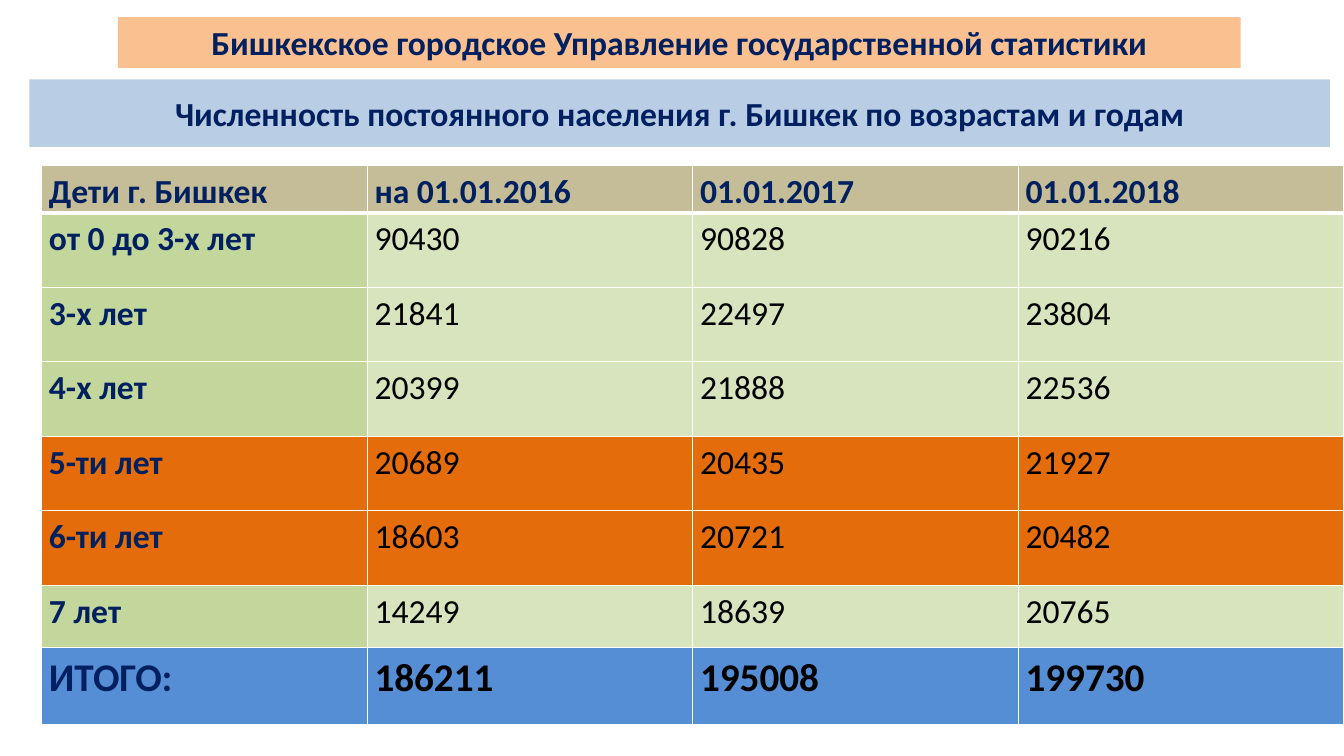
from lxml import etree
from pptx import Presentation
from pptx.dml.color import RGBColor
from pptx.enum.shapes import MSO_SHAPE
from pptx.enum.text import MSO_ANCHOR, PP_ALIGN
from pptx.oxml.ns import qn
from pptx.util import Pt

RECTANGLE = MSO_SHAPE.RECTANGLE
CENTER = PP_ALIGN.CENTER
MIDDLE = MSO_ANCHOR.MIDDLE

COLORS = {
    "navy": "002060",
    "black": "000000",
    "white": "FFFFFF",
    "peach": "FAC090",
    "pale_blue": "B9CDE5",
    "tan": "C4BD97",
    "green": "C3D69B",
    "pale_green": "D7E4BD",
    "orange": "E46C0A",
    "blue": "558ED5",
}

ROWS = [
    ("header", 33.85, ["Дети г. Бишкек", "на 01.01.2016", "01.01.2017", "01.01.2018"]),
    ("age", 53.2, ["от 0 до 3-х лет", "90430", "90828", "90216"]),
    ("age", 53.2, ["3-х лет", "21841", "22497", "23804"]),
    ("age", 53.2, ["4-х лет", "20399", "21888", "22536"]),
    ("highlight", 53.2, ["5-ти лет", "20689", "20435", "21927"]),
    ("highlight", 53.2, ["6-ти лет", "18603", "20721", "20482"]),
    ("age", 44.4, ["7 лет", "14249", "18639", "20765"]),
    ("total", 55, ["ИТОГО:", "186211", "195008", "199730"]),
]

ROW_STYLES = {
    "header": {"fills": ("tan", "tan"), "value_color": "navy", "bold": True, "size": 24},
    "age": {"fills": ("green", "pale_green"), "value_color": "black", "bold": False, "size": 24},
    "highlight": {"fills": ("orange", "orange"), "value_color": "black", "bold": False, "size": 24},
    "total": {"fills": ("blue", "blue"), "value_color": "black", "bold": True, "size": 28},
}

CELL_MARGINS = {
    "margin_left": Pt(5.2),
    "margin_right": Pt(5.2),
    "margin_top": 0,
    "margin_bottom": 0,
}


def rgb(name):
    return RGBColor.from_string(COLORS[name])


def paint(fill, color):
    fill.solid()
    fill.fore_color.rgb = rgb(color)


def write(paragraph, text, color, size=24, bold=True):
    run = paragraph.add_run()
    run.text = text
    for name, value in {"name": "Calibri", "size": Pt(size), "bold": bold}.items():
        setattr(run.font, name, value)
    run.font.color.rgb = rgb(color)


def add_banner(slide, box, text, color):
    shape = slide.shapes.add_shape(RECTANGLE, *map(Pt, box))
    shape.shadow.inherit = False
    shape.line.fill.background()
    paint(shape.fill, color)
    frame = shape.text_frame
    for name, value in {"word_wrap": True, "vertical_anchor": MIDDLE}.items():
        setattr(frame, name, value)
    paragraph = frame.paragraphs[0]
    paragraph.alignment = CENTER
    write(paragraph, text, "navy")


def set_borders(cell, widths):
    properties = cell._tc.get_or_add_tcPr()
    for index, (side, width) in enumerate(widths.items()):
        line = etree.Element(qn(f"a:{side}"), w=str(Pt(width)))
        fill = etree.SubElement(line, qn("a:solidFill"))
        etree.SubElement(fill, qn("a:srgbClr"), val=COLORS["white"])
        properties.insert(index, line)


def add_population_table(slide, box):
    column_count = len(ROWS[0][2])
    table = slide.shapes.add_table(len(ROWS), column_count, *map(Pt, box)).table
    for column in table.columns:
        column.width = Pt(box[2] / column_count)
    for row_index, (kind, height, texts) in enumerate(ROWS):
        table.rows[row_index].height = Pt(height)
        style = ROW_STYLES[kind]
        top = 3 if row_index == 1 else 1
        bottom = 3 if kind == "header" else 1
        for column_index, text in enumerate(texts):
            cell = table.cell(row_index, column_index)
            is_label = column_index == 0
            for name, value in CELL_MARGINS.items():
                setattr(cell, name, value)
            paint(cell.fill, style["fills"][0 if is_label else 1])
            set_borders(cell, {"lnL": 1, "lnR": 1, "lnT": top, "lnB": bottom})
            paragraph = cell.text_frame.paragraphs[0]
            paragraph.line_spacing = 1.15
            color = "navy" if is_label else style["value_color"]
            write(paragraph, text, color, style["size"], is_label or style["bold"])


def build_population_slide(presentation):
    slide = presentation.slides.add_slide(presentation.slide_layouts[6])
    add_banner(slide, (21, 56.6, 929, 48.4),
               "Численность постоянного населения г. Бишкек по возрастам и годам", "pale_blue")
    add_population_table(slide, (29.8, 118.2, 930.2, 399.25))
    add_banner(slide, (84.2, 12.2, 802, 36.3),
               "Бишкекское городское Управление государственной статистики", "peach")


def main():
    presentation = Presentation()
    presentation.slide_width = Pt(960)
    presentation.slide_height = Pt(540)
    build_population_slide(presentation)
    presentation.save("out.pptx")


if __name__ == "__main__":
    main()
